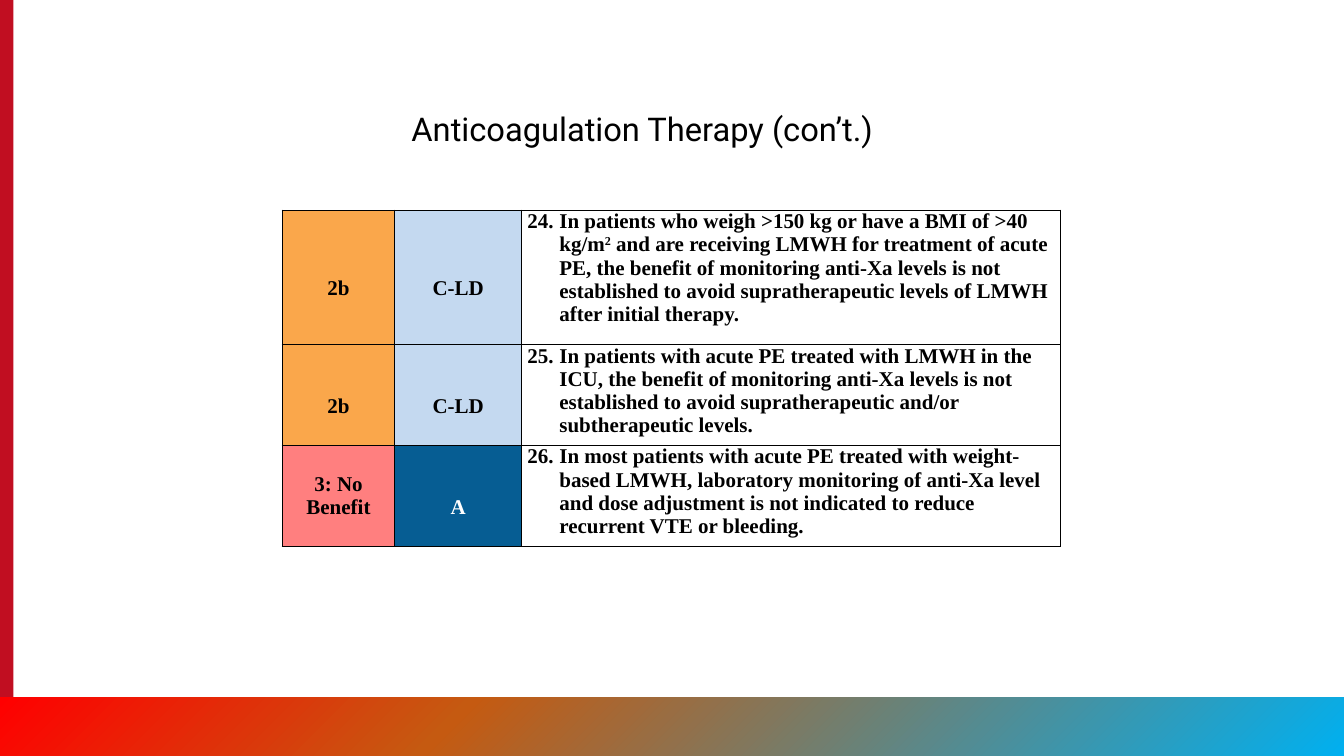
"""Build the anticoagulation therapy recommendations slide."""
from copy import deepcopy
from dataclasses import dataclass

from pptx import Presentation
from pptx.dml.color import RGBColor
from pptx.enum.shapes import MSO_SHAPE
from pptx.enum.text import MSO_ANCHOR, PP_ALIGN
from pptx.oxml import parse_xml
from pptx.oxml.ns import nsdecls, qn
from pptx.shapes.autoshape import Shape
from pptx.slide import Slide
from pptx.table import Table, _Cell
from pptx.text.text import _Paragraph
from pptx.util import Inches, Pt

COLORS = {
    "black": "000000",
    "white": "FFFFFF",
    "crimson": "C10E21",
    "red": "FF0000",
    "rust": "C55A11",
    "sky": "00B0F0",
    "orange": "FAA74B",
    "pale_blue": "C4D9F0",
    "pink": "FF7F7F",
    "deep_blue": "065D93",
}
FOOTER_STOPS = [(0, "sky"), (0.66, "rust"), (1, "red")]
COLUMN_WIDTHS = [1.34, 1.51, 6.42]
ROW_HEIGHTS = [1.6, 1.14, 1.14]
FIRST_NUMBER = 24


@dataclass
class Rating:
    text: str
    fill: str
    color: str = "black"
    line_spacing: float = 2


@dataclass
class Recommendation:
    strength: Rating
    evidence: Rating
    text: str
    superscript: str = ""
    rest: str = ""


WEAK = Rating("2b", "orange")
LIMITED_DATA = Rating("C-LD", "pale_blue")
RECOMMENDATIONS = [
    Recommendation(
        WEAK, LIMITED_DATA,
        "In patients who weigh >150 kg or have a BMI of >40 kg/m", "2",
        " and are receiving LMWH for treatment of acute PE, the benefit of "
        "monitoring anti-Xa levels is not established to avoid "
        "supratherapeutic levels of LMWH after initial therapy."),
    Recommendation(
        WEAK, LIMITED_DATA,
        "In patients with acute PE treated with LMWH in the ICU, the benefit "
        "of monitoring anti-Xa levels is not established to avoid "
        "supratherapeutic and/or subtherapeutic levels."),
    Recommendation(
        Rating("3: No Benefit", "pink", line_spacing=1),
        Rating("A", "deep_blue", "white"),
        "In most patients with acute PE treated with weight-based LMWH, "
        "laboratory monitoring of anti-Xa level and dose adjustment is not "
        "indicated to reduce recurrent VTE or bleeding."),
]


def rgb(name: str) -> RGBColor:
    return RGBColor.from_string(COLORS[name])


def add_band(slide: Slide, left: float, top: float, width: float, height: float) -> Shape:
    band = slide.shapes.add_shape(
        MSO_SHAPE.RECTANGLE, Inches(left), Inches(top), Inches(width), Inches(height))
    band.shadow.inherit = False
    band.line.fill.background()
    return band


def add_footer(slide: Slide) -> None:
    footer = add_band(slide, 0, 8.3, 16, 0.7)
    footer.rotation = 180
    footer.fill.gradient()
    footer.fill.gradient_angle = 315
    stop_list = footer._element.spPr.find(".//" + qn("a:gsLst"))
    stop_list.append(deepcopy(stop_list[-1]))
    for stop, (position, color) in zip(footer.fill.gradient_stops, FOOTER_STOPS):
        stop.position = position
        stop.color.rgb = rgb(color)


def add_run(paragraph: _Paragraph, text: str, font: str, size: float,
            color: str = "black", bold: bool = False, raised: bool = False) -> None:
    run = paragraph.add_run()
    run.text = text
    run.font.name = font
    run.font.size = Pt(size)
    run.font.bold = bold
    run.font.color.rgb = rgb(color)
    if raised:
        run.font._element.set("baseline", "30000")


def add_title(slide: Slide, text: str) -> None:
    title = slide.shapes.add_textbox(Inches(4.8), Inches(1.25), Inches(6.41), Inches(0.57))
    title.text_frame.word_wrap = True
    add_run(title.text_frame.paragraphs[0], text, "Roboto", 28)


def prepare_cell(cell: _Cell) -> _Paragraph:
    cell.margin_left = cell.margin_right = Inches(0.07)
    cell.margin_top = cell.margin_bottom = 0
    properties = cell._tc.get_or_add_tcPr()
    for side in "LRTB":
        properties.append(parse_xml(
            f'<a:ln{side} {nsdecls("a")} w="{Pt(1)}"><a:solidFill>'
            f'<a:srgbClr val="{COLORS["black"]}"/></a:solidFill></a:ln{side}>'))
    paragraph = cell.text_frame.paragraphs[0]
    paragraph.space_after = Pt(8)
    return paragraph


def fill_rating(cell: _Cell, rating: Rating) -> None:
    paragraph = prepare_cell(cell)
    cell.vertical_anchor = MSO_ANCHOR.MIDDLE
    cell.fill.solid()
    cell.fill.fore_color.rgb = rgb(rating.fill)
    paragraph.alignment = PP_ALIGN.CENTER
    paragraph.line_spacing = rating.line_spacing
    add_run(paragraph, rating.text, "Times New Roman", 18, rating.color, bold=True)


def fill_statement(cell: _Cell, number: int, item: Recommendation) -> None:
    paragraph = prepare_cell(cell)
    cell.fill.background()
    properties = paragraph._p.get_or_add_pPr()
    properties.set("marL", str(Inches(0.38)))
    properties.set("indent", str(-Inches(0.38)))
    properties.append(parse_xml(
        f'<a:buFont {nsdecls("a")} typeface="+mj-lt"/>'))
    properties.append(parse_xml(
        f'<a:buAutoNum {nsdecls("a")} type="arabicPeriod" startAt="{number}"/>'))
    for text in (item.text, item.superscript, item.rest):
        if text:
            add_run(paragraph, text, "Times New Roman", 18, bold=True,
                    raised=text == item.superscript)


def add_recommendations(slide: Slide) -> Table:
    table = slide.shapes.add_table(
        len(ROW_HEIGHTS), len(COLUMN_WIDTHS), Inches(3.36), Inches(2.5),
        Inches(sum(COLUMN_WIDTHS)), Inches(sum(ROW_HEIGHTS))).table
    table.first_row = table.horz_banding = False
    for column, width in zip(table.columns, COLUMN_WIDTHS):
        column.width = Inches(width)
    for index, (height, item) in enumerate(zip(ROW_HEIGHTS, RECOMMENDATIONS)):
        table.rows[index].height = Inches(height)
        fill_rating(table.cell(index, 0), item.strength)
        fill_rating(table.cell(index, 1), item.evidence)
        fill_statement(table.cell(index, 2), FIRST_NUMBER + index, item)
    return table


def main() -> None:
    presentation = Presentation()
    presentation.slide_width = Inches(16)
    presentation.slide_height = Inches(9)
    slide = presentation.slides.add_slide(presentation.slide_layouts[6])
    side_band = add_band(slide, 0, 0, 0.16, 9)
    side_band.fill.solid()
    side_band.fill.fore_color.rgb = rgb("crimson")
    add_footer(slide)
    add_title(slide, "Anticoagulation Therapy (con’t.)")
    add_recommendations(slide)
    presentation.save("out.pptx")


if __name__ == "__main__":
    main()
